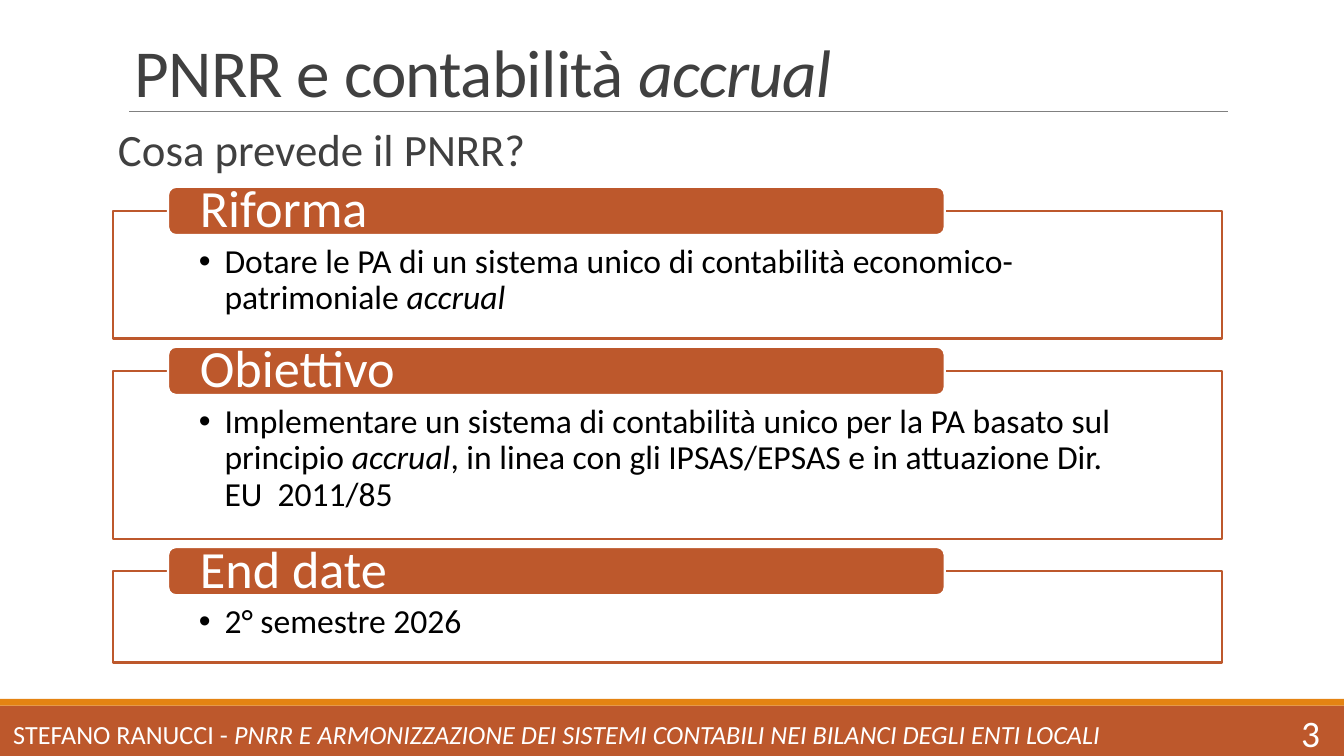
from lxml import etree
from pptx import Presentation
from pptx.dml.color import RGBColor
from pptx.enum import shapes, text
from pptx.oxml import ns
from pptx.util import Inches, Pt

COLORS = {"rust": "BD582C", "orange": "E48312", "gray": "808080",
          "ink": "404040", "black": "000000", "white": "FFFFFF"}
FONT = "Calibri"

SLIDE_WIDTH = 10
SLIDE_HEIGHT = SLIDE_WIDTH * 9 / 16
FOOTER_TOP = 5.25
PANEL_LEFT, PANEL_WIDTH, FIRST_PANEL_TOP, PANEL_GAP = 0.84, 8.25, 1.57, 0.24
TAB_LEFT, TAB_WIDTH, TAB_HEIGHT = 1.25, 5.78, 0.36

# Heading, panel height, runs as (words, italic)
SECTIONS = [
    ("Riforma", 0.95, [
        ("Dotare le PA di un sistema unico di contabilità economico-patrimoniale ", False),
        ("accrual", True)]),
    ("Obiettivo", 1.25, [
        ("Implementare un sistema di contabilità unico per la PA basato sul principio ", False),
        ("accrual", True),
        (", in linea con gli IPSAS/EPSAS e in attuazione Dir. EU  2011/85", False)]),
    ("End date", 0.68, [("2° semestre 2026", False)]),
]


def rgb(name):
    return RGBColor.from_string(COLORS[name])


def write_runs(paragraph, runs, size, color):
    for words, italic in runs:
        run = paragraph.add_run()
        run.text = words
        run.font.name = FONT
        run.font.size = Pt(size)
        run.font.italic = italic
        run.font.color.rgb = rgb(color)


def add_block(slide, kind, box, fill, line=None):
    block = slide.shapes.add_shape(kind, *map(Inches, box))
    block.shadow.inherit = False
    block.fill.solid()
    block.fill.fore_color.rgb = rgb(fill)
    if line:
        block.line.color.rgb = rgb(line)
        block.line.width = Pt(1.25)
    else:
        block.line.fill.background()
    return block


def start_block_text(block, insets, anchor):
    """Lay out the text area of a block and return its first paragraph."""
    frame = block.text_frame
    frame.word_wrap = True
    frame.vertical_anchor = anchor
    frame.margin_left, frame.margin_top, frame.margin_right, frame.margin_bottom = map(
        Inches, insets)
    paragraph = frame.paragraphs[0]
    paragraph.alignment = text.PP_ALIGN.LEFT
    paragraph.line_spacing = 0.9
    return paragraph


def add_label(slide, box, runs, size, color="white", anchor=text.MSO_ANCHOR.MIDDLE,
              align=text.PP_ALIGN.LEFT):
    frame = slide.shapes.add_textbox(*map(Inches, box)).text_frame
    frame.word_wrap = True
    frame.vertical_anchor = anchor
    frame.paragraphs[0].alignment = align
    write_runs(frame.paragraphs[0], runs, size, color)


def add_bullet(paragraph, indent):
    props = paragraph._p.get_or_add_pPr()
    props.set("marL", str(Inches(indent)))
    props.set("indent", str(-Inches(indent)))
    etree.SubElement(props, ns.qn("a:buFont")).set("typeface", "Arial")
    etree.SubElement(props, ns.qn("a:buChar")).set("char", "•")


def set_opacity(block, percent):
    color = block._element.spPr.find(ns.qn("a:solidFill"))[0]
    etree.SubElement(color, ns.qn("a:alpha")).set("val", str(percent * 1000))


def add_title(slide):
    title = slide.shapes.title
    title.left, title.top = Inches(0.9), Inches(0.24)
    title.width, title.height = Inches(8.25), Inches(0.64)
    frame = title.text_frame
    frame.auto_size = text.MSO_AUTO_SIZE.NONE
    frame.vertical_anchor = text.MSO_ANCHOR.BOTTOM
    heading = frame.paragraphs[0]
    heading.alignment = text.PP_ALIGN.LEFT
    heading.line_spacing = 0.85
    write_runs(heading, [("PNRR e contabilità ", False), ("accrual", True)], 36, "ink")
    for run in heading.runs:
        run.font._element.set("spc", "-40")


def add_title_rule(slide):
    rule = slide.shapes.add_connector(
        shapes.MSO_CONNECTOR.STRAIGHT, Inches(0.96), Inches(0.83), Inches(9.14), Inches(0.83))
    rule.line.color.rgb = rgb("gray")
    rule.line.width = Pt(0.5)
    etree.SubElement(rule._element.spPr, ns.qn("a:effectLst"))


def add_section(slide, top, heading, height, runs):
    """Outlined panel with a bullet, and a heading tab over its top edge."""
    panel = add_block(slide, shapes.MSO_SHAPE.RECTANGLE,
                      (PANEL_LEFT, top, PANEL_WIDTH, height), "white", "rust")
    set_opacity(panel, 90)
    item = start_block_text(panel, (0.64, 0.25, 0.64, 0.14), text.MSO_ANCHOR.TOP)
    add_bullet(item, 0.19)
    write_runs(item, runs, 18, "black")

    tab = add_block(slide, shapes.MSO_SHAPE.ROUNDED_RECTANGLE,
                    (TAB_LEFT, top - TAB_HEIGHT / 2, TAB_WIDTH, TAB_HEIGHT), "rust", "white")
    label = start_block_text(tab, (0.22, 0, 0.22, 0), text.MSO_ANCHOR.MIDDLE)
    write_runs(label, [(heading, False)], 28, "white")


def add_footer(slide):
    add_label(slide, (0, 5.3, 9.15, 0.33), [
        ("STEFANO RANUCCI - ", False),
        ("PNRR E ARMONIZZAZIONE DEI SISTEMI CONTABILI NEI BILANCI DEGLI ENTI LOCALI", True)], 14)
    add_label(slide, (8.84, 5.3, 1.08, 0.3), [("3", False)], 20, align=text.PP_ALIGN.RIGHT)


def main():
    deck = Presentation()
    deck.slide_width, deck.slide_height = Inches(SLIDE_WIDTH), Inches(SLIDE_HEIGHT)
    slide = deck.slides.add_slide(deck.slide_layouts[5])

    add_block(slide, shapes.MSO_SHAPE.RECTANGLE,
              (0, FOOTER_TOP, SLIDE_WIDTH, SLIDE_HEIGHT - FOOTER_TOP), "rust")
    add_block(slide, shapes.MSO_SHAPE.RECTANGLE,
              (0, FOOTER_TOP - 0.05, SLIDE_WIDTH, 0.05), "orange")
    add_title_rule(slide)
    add_title(slide)

    top = FIRST_PANEL_TOP
    for heading, height, runs in SECTIONS:
        add_section(slide, top, heading, height, runs)
        top += height + PANEL_GAP

    add_footer(slide)
    add_label(slide, (0.78, 0.86, 8.37, 0.5), [("Cosa prevede il PNRR?", False)], 24, "ink",
              anchor=text.MSO_ANCHOR.TOP)
    deck.save("out.pptx")


if __name__ == "__main__":
    main()
